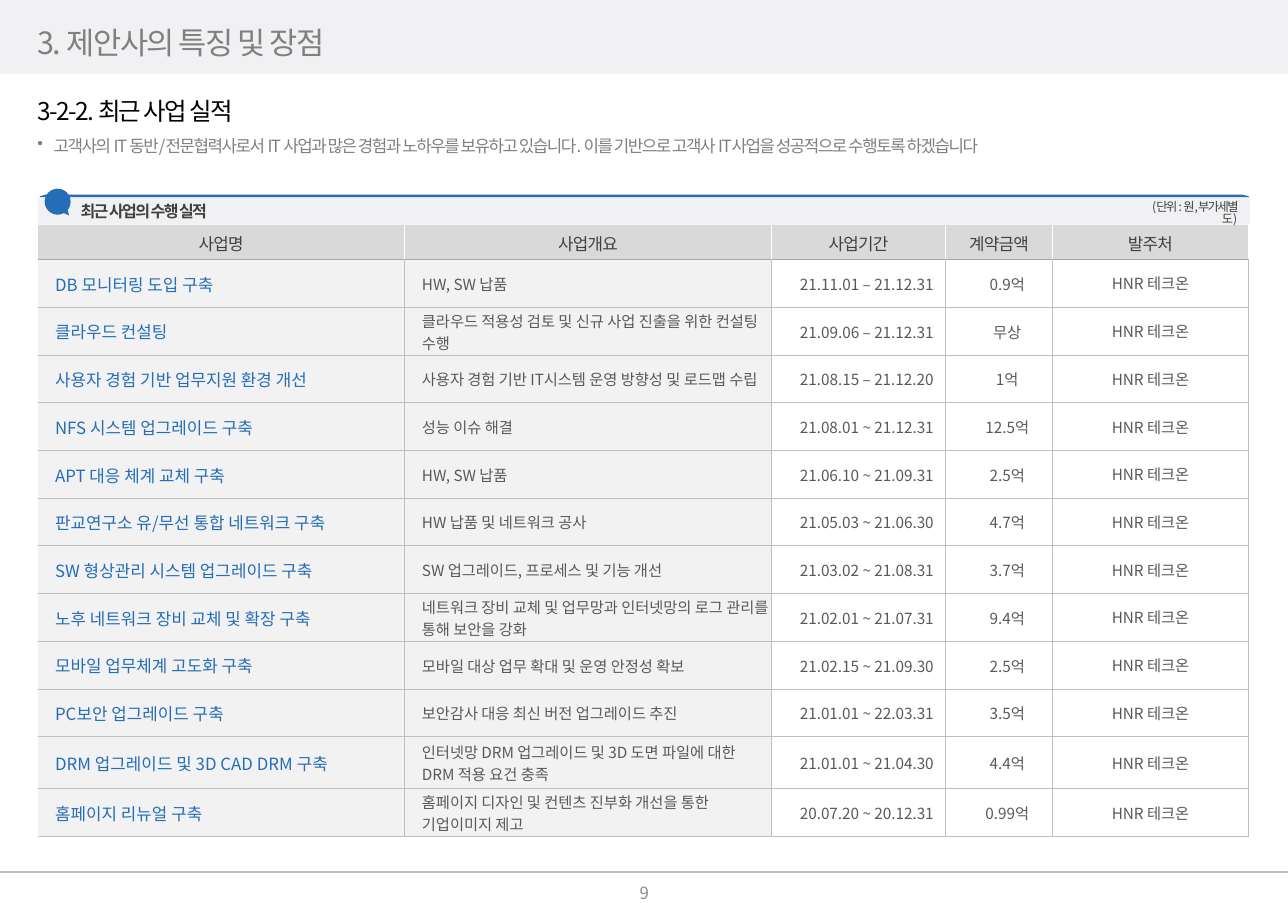
import pptx
import pptx.util
import pptx.dml.color
import pptx.enum.shapes
import pptx.enum.text
import pptx.oxml
import pptx.oxml.ns

Cm, Pt = pptx.util.Cm, pptx.util.Pt
ALIGN = pptx.enum.text.PP_ALIGN
ANCHOR = pptx.enum.text.MSO_ANCHOR
PRESET = pptx.enum.shapes.MSO_SHAPE
COLORS = {
    "black": "000000", "white": "FFFFFF", "band": "F1F1F4", "panel": "F1F1F3",
    "blue": "256DB6", "grey": "808080", "page": "8C8C8C", "dark": "404040",
    "body": "595959", "head": "D9D9D9", "cell": "F2F2F2", "rule": "BFBFBF",
    "head_rule": "A6A6A6",
}
CLIENT = "HNR 테크온"
HEADINGS = ["사업명", "사업개요", "사업기간", "계약금액", "발주처"]
PROJECTS = [
    ("DB 모니터링 도입 구축", "HW, SW 납품", "21.11.01 – 21.12.31", "0.9억"),
    ("클라우드 컨설팅", "클라우드 적용성 검토 및 신규 사업 진출을 위한 컨설팅 수행",
     "21.09.06 – 21.12.31", "무상"),
    ("사용자 경험 기반 업무지원 환경 개선", "사용자 경험 기반 IT시스템 운영 방향성 및 로드맵 수립",
     "21.08.15 – 21.12.20", "1억"),
    ("NFS 시스템 업그레이드 구축", "성능 이슈 해결", "21.08.01 ~ 21.12.31", "12.5억"),
    ("APT 대응 체계 교체 구축", "HW, SW 납품", "21.06.10 ~ 21.09.31", "2.5억"),
    ("판교연구소 유/무선 통합 네트워크 구축", "HW 납품 및 네트워크 공사", "21.05.03 ~ 21.06.30", "4.7억"),
    ("SW 형상관리 시스템 업그레이드 구축", "SW 업그레이드, 프로세스 및 기능 개선",
     "21.03.02 ~ 21.08.31", "3.7억"),
    ("노후 네트워크 장비 교체 및 확장 구축", "네트워크 장비 교체 및 업무망과 인터넷망의 로그 관리를 통해 보안을 강화",
     "21.02.01 ~ 21.07.31", "9.4억"),
    ("모바일 업무체계 고도화 구축", "모바일 대상 업무 확대 및 운영 안정성 확보", "21.02.15 ~ 21.09.30", "2.5억"),
    ("PC보안 업그레이드 구축", "보안감사 대응 최신 버전 업그레이드 추진", "21.01.01 ~ 22.03.31", "3.5억"),
    ("DRM 업그레이드 및 3D CAD DRM 구축", "인터넷망 DRM 업그레이드 및 3D 도면 파일에 대한 DRM 적용 요건 충족",
     "21.01.01 ~ 21.04.30", "4.4억"),
    ("홈페이지 리뉴얼 구축", "홈페이지 디자인 및 컨텐츠 진부화 개선을 통한 기업이미지 제고",
     "20.07.20 ~ 20.12.31", "0.99억"),
]


def rgb(color):
    return pptx.dml.color.RGBColor.from_string(COLORS[color])


def add_xml(parent, tag, **attributes):
    child = pptx.oxml.parse_xml(f"<{tag} {pptx.oxml.ns.nsdecls('a')}/>")
    for key, value in attributes.items():
        child.set(key, value)
    parent.append(child)
    return child


class SlideBuilder:
    """Draws styled elements on the current slide."""

    font = "Noto Sans CJK KR"

    def __init__(self, slide):
        self.slide = slide
        self.shapes = slide.shapes

    def add_words(self, frame, text, size, color, spacing=-1, align=ALIGN.LEFT, bold=False,
                  line_spacing=None, indent=(0, 0), bullet=None):
        paragraph = frame.paragraphs[0]
        properties = paragraph._p.get_or_add_pPr()
        properties.set("marL", str(Cm(indent[0])))
        properties.set("indent", str(Cm(indent[1])))
        if bullet:
            add_xml(properties, "a:buChar", char=bullet)
        paragraph.alignment = align
        paragraph.line_spacing = line_spacing
        run = paragraph.add_run()
        run.text = text
        run.font.size, run.font.bold, run.font.name = Pt(size), bold, self.font
        run.font.color.rgb = rgb(color)
        run_properties = run._r.get_or_add_rPr()
        run_properties.set("spc", str(int(spacing * 100)))
        add_xml(run_properties, "a:ea", typeface=self.font)

    def place(self, box, left, top, width, height):
        box.left, box.top, box.width, box.height = Cm(left), Cm(top), Cm(width), Cm(height)

    def title(self, area, text):
        heading = self.shapes.title
        self.place(heading, *area)
        heading.text_frame.vertical_anchor = ANCHOR.BOTTOM
        heading.text_frame.auto_size = pptx.enum.text.MSO_AUTO_SIZE.NONE
        self.add_words(heading.text_frame, text, 20, "grey", line_spacing=0.9)

    def text(self, area, text, size, color, anchor=ANCHOR.TOP, margin=None, **style):
        frame = self.shapes.add_textbox(*map(Cm, area)).text_frame
        frame.word_wrap = True
        frame.vertical_anchor = anchor
        if margin is not None:
            frame.margin_left = frame.margin_right = Cm(margin)
            frame.margin_top = frame.margin_bottom = Cm(margin)
        self.add_words(frame, text, size, color, **style)

    def paint(self, shape, color):
        shape.shadow.inherit = False
        shape.fill.solid()
        shape.fill.fore_color.rgb = rgb(color)
        shape.line.fill.background()
        return shape

    def preset(self, kind, area, color):
        return self.paint(self.shapes.add_shape(kind, *map(Cm, area)), color)

    def outline(self, points, color):
        start, *rest = [(Cm(x), Cm(y)) for x, y in points]
        builder = self.shapes.build_freeform(*start)
        builder.add_line_segments(rest)
        return self.paint(builder.convert_to_shape(), color)

    def rule(self, left, right, y, color, width):
        line = self.shapes.add_connector(
            pptx.enum.shapes.MSO_CONNECTOR.STRAIGHT, Cm(left), Cm(y), Cm(right), Cm(y))
        line.line.color.rgb = rgb(color)
        line.line.width = Pt(width)
        add_xml(line._element.spPr, "a:effectLst")

    def border(self, cell, side, color, width):
        edge = add_xml(cell._tc.get_or_add_tcPr(), f"a:ln{side}", w=str(Pt(width)))
        if color:
            add_xml(add_xml(edge, "a:solidFill"), "a:srgbClr", val=COLORS[color])
        else:
            add_xml(edge, "a:noFill")

    def cell(self, cell, text, margins, edges, fill, **style):
        cell.margin_left, cell.margin_top, cell.margin_right, cell.margin_bottom = map(Cm, margins)
        cell.vertical_anchor = ANCHOR.MIDDLE
        for side, edge in zip("LRTB", edges):
            self.border(cell, side, *edge)
        if fill:
            cell.fill.solid()
            cell.fill.fore_color.rgb = rgb(fill)
        else:
            cell.fill.background()
        self.add_words(cell.text_frame, text, **style)

    def table(self, left, top, widths, heights, headings, records):
        area = map(Cm, (left, top, sum(widths), sum(heights)))
        table = self.shapes.add_table(len(heights), len(widths), *area).table
        table.first_row = table.horz_banding = False
        for column, width in zip(table.columns, widths):
            column.width = Cm(width)
        for row, height in zip(table.rows, heights):
            row.height = Cm(height)
        none, thin = (None, 0.5), ("rule", 0.5)
        white, strong = ("white", 1), ("head_rule", 1)
        last = len(widths) - 1
        for c, heading in enumerate(headings):
            edges = (white if c else none, white if c < last else none, none, strong)
            self.cell(table.cell(0, c), heading, [0.13] * 4, edges, "head", size=11,
                      color="dark", spacing=-0.5, align=ALIGN.CENTER)
        for r, record in enumerate(records, 1):
            for c, value in enumerate(record):
                edges = (thin if c else none, thin, strong if r == 1 else thin, thin)
                margins = (0.4, 0.02, 0.02, 0) if c < last else (0.1, 0, 0.1, 0)
                self.cell(table.cell(r, c), value, margins, edges, "cell" if c < 2 else None,
                          size=10 if c else 11, color="body" if c else "blue", spacing=0,
                          align=ALIGN.LEFT if c < 2 else ALIGN.CENTER)


def main():
    deck = pptx.Presentation()
    deck.slide_width, deck.slide_height = Cm(29.7), Cm(21)
    page = SlideBuilder(deck.slides.add_slide(deck.slide_layouts[5]))

    band = page.preset(PRESET.RECTANGLE, (0, 0, 29.7, 1.7), "band")
    page.shapes._spTree.insert(2, band._element)
    page.title((0.61, 0.41, 28.5, 1.12), "3. 제안사의 특징 및 장점")
    page.rule(0, 29.7, 20.1, "rule", 1.5)
    page.text((13.77, 20.32, 2.18, 0.5), "9", 11, "page", ANCHOR.MIDDLE, align=ALIGN.CENTER)
    page.text((0.61, 2.13, 28.5, 0.91), "3-2-2. 최근 사업 실적", 16, "black", ANCHOR.MIDDLE,
              line_spacing=0.9)
    page.text((0.61, 2.9, 28.5, 0.84),
              "고객사의 IT 동반/전문협력사로서 IT 사업과 많은 경험과 노하우를 보유하고 있습니다. "
              "이를 기반으로 고객사 IT사업을 성공적으로 수행토록 하겠습니다",
              11, "grey", line_spacing=Pt(16), indent=(0.38, -0.38), bullet="•")

    heights = [0.8] + [1.2 if "DRM" in project[0] else 1.1 for project in PROJECTS]
    page.table(0.87, 5.18, [8.46, 8.46, 4.01, 2.47, 4.52], heights, HEADINGS,
               [(*project, CLIENT) for project in PROJECTS])

    page.outline([(1.04, 4.49), (28.65, 4.49), (28.78, 4.52), (28.81, 4.55),
                  (0.91, 4.55), (0.94, 4.52)], "blue")
    panel = page.outline([(0.91, 4.55), (28.8, 4.55), (28.83, 4.6), (28.83, 5.18),
                          (0.87, 5.18), (0.87, 4.6)], "panel")
    panel.text_frame.vertical_anchor = ANCHOR.MIDDLE
    page.add_words(panel.text_frame, "최근 사업의 수행 실적", 10.5, "dark", bold=True,
                   indent=(0, 0.74))
    callout = page.preset(PRESET.OVAL_CALLOUT, (1.03, 4.35, 0.6, 0.6), "blue")
    callout.adjustments[0], callout.adjustments[1] = 0.44, 0.53
    page.text((26.24, 4.64, 2.29, 0.7), "(단위 : 원,부가세별도)", 8, "dark", margin=0,
              align=ALIGN.RIGHT, line_spacing=0.85)

    deck.save("out.pptx")


if __name__ == "__main__":
    main()
